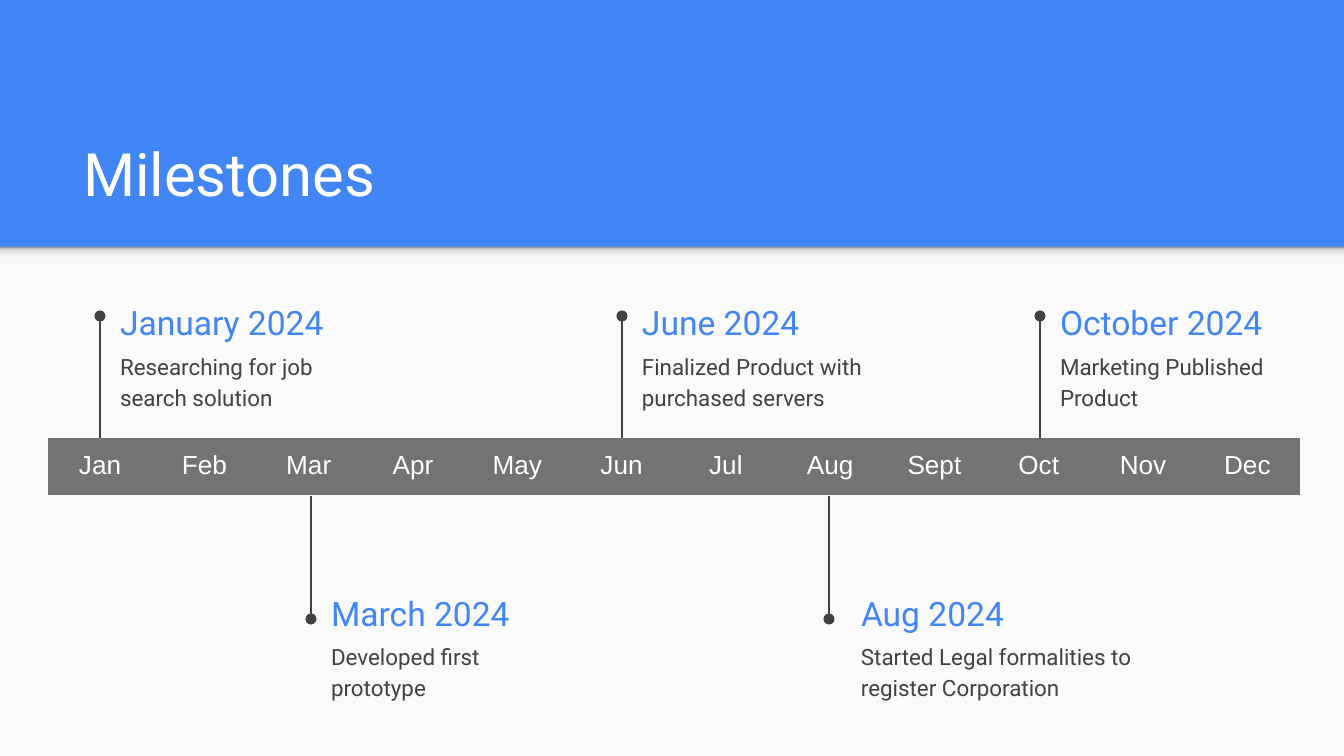
from typing import NamedTuple

from lxml.etree import SubElement
from pptx import Presentation
from pptx.dml.color import RGBColor
from pptx.enum.shapes import MSO_CONNECTOR, MSO_SHAPE
from pptx.enum.text import MSO_ANCHOR, PP_ALIGN
from pptx.oxml.ns import qn
from pptx.util import Emu, Pt

SCALE = 914400 / 134.4
INSET = 13
COLORS = {
    "blue": "4285F4",
    "paper": "FAFAFA",
    "ink": "424242",
    "bar": "737373",
    "white": "FFFFFF",
}
SHADE = [(0, "F9F9F9"), (36, "F9F9F9"), (80, "DEDEDE"), (100, "999999")]
MONTHS = "Jan Feb Mar Apr May Jun Jul Aug Sept Oct Nov Dec".split()
NO_STYLE = "{2D5ABB26-0587-4C30-8999-92F81FD0307C}"


class Box(NamedTuple):
    x: int
    y: int
    w: int
    h: int


class Event(NamedTuple):
    x: int
    above: bool
    head: str
    note: str
    width: int = 266
    gap: int = 7


BAR = Box(48, 438, 1252, 57)
EVENTS = [
    Event(100, True, "January 2024", "Researching for job search solution"),
    Event(311, False, "March 2024", "Developed first prototype"),
    Event(622, True, "June 2024", "Finalized Product with purchased servers", 300),
    Event(829, False, "Aug 2024",
          "Started Legal formalities to register Corporation", 312, 19),
    Event(1040, True, "October 2024", "Marketing Published Product"),
]


def px(size: int) -> Emu:
    return Emu(round(size * SCALE))


def emus(box: Box) -> list[Emu]:
    return [px(size) for size in box]


def rgb(name: str) -> RGBColor:
    return RGBColor.from_string(COLORS[name])


def add_run(para, text: str, size: int, color: str, face: str = "Roboto") -> None:
    run = para.add_run()
    run.text = text
    run.font.size = Pt(size)
    run.font.name = face
    run.font.color.rgb = rgb(color)


def set_frame(frame, anchor: MSO_ANCHOR) -> None:
    frame.word_wrap = True
    frame.vertical_anchor = anchor
    frame.margin_left = frame.margin_right = px(INSET)
    frame.margin_top = frame.margin_bottom = px(INSET)


def add_rect(slide, box: Box):
    rect = slide.shapes.add_shape(MSO_SHAPE.RECTANGLE, *emus(box))
    rect.shadow.inherit = False
    rect.line.fill.background()
    return rect


def add_panel(slide) -> None:
    """Draw the pale lower area and the soft shade along its top edge."""
    panel = add_rect(slide, Box(0, 247, 1344, 509))
    panel.fill.solid()
    panel.fill.fore_color.rgb = rgb("paper")

    edge = add_rect(slide, Box(0, 247, 1344, 16))
    edge.fill.gradient()
    edge.fill.gradient_angle = 90
    stops = next(edge.element.iter(qn("a:gsLst")))
    for stop in list(stops):
        stops.remove(stop)
    for pos, shade in SHADE:
        stop = SubElement(stops, qn("a:gs"), pos=str(pos * 1000))
        SubElement(stop, qn("a:srgbClr"), val=shade)


def set_title(slide, text: str) -> None:
    title = slide.shapes.title
    title.left, title.top, title.width, title.height = emus(Box(70, 109, 1208, 113))
    set_frame(title.text_frame, MSO_ANCHOR.BOTTOM)
    para = title.text_frame.paragraphs[0]
    para.alignment = PP_ALIGN.LEFT
    para.space_after = Pt(4)
    add_run(para, text, 32, "white")


def add_text(slide, box: Box, anchor: MSO_ANCHOR, text: str, size: int, color: str):
    frame = slide.shapes.add_textbox(*emus(box)).text_frame
    set_frame(frame, anchor)
    para = frame.paragraphs[0]
    add_run(para, text, size, color)
    return para


def add_pin(slide, x: int, start: int, end: int) -> None:
    """Draw a stem from the bar that ends in a dot."""
    pin = slide.shapes.add_connector(
        MSO_CONNECTOR.STRAIGHT, px(x), px(start), px(x), px(end))
    pin.line.width = Pt(0.75)
    pin.line.color.rgb = rgb("ink")
    SubElement(pin.line._get_or_add_ln(), qn("a:tailEnd"), type="oval")
    SubElement(pin.element.spPr, qn("a:effectLst"))


def add_event(slide, event: Event) -> None:
    if event.above:
        start, end, top, low = BAR.y, 316, 293, 336
    else:
        start, end, top, low = BAR.y + BAR.h + 1, 619, 584, 626
    add_pin(slide, event.x, start, end)
    left = event.x + event.gap
    add_text(slide, Box(left, top, 266, 58), MSO_ANCHOR.MIDDLE,
             event.head, 18, "blue")
    note = add_text(slide, Box(left, low, event.width, 85), MSO_ANCHOR.TOP,
                    event.note, 12, "ink")
    note.line_spacing = 1.15
    note.space_after = Pt(16)


def add_months(slide) -> None:
    frame = slide.shapes.add_table(1, len(MONTHS), *emus(BAR))
    next(frame.element.iter(qn("a:tableStyleId"))).text = NO_STYLE
    table = frame.table
    table.first_row = table.horz_banding = False
    for cell, month in zip(table.iter_cells(), MONTHS):
        cell.fill.solid()
        cell.fill.fore_color.rgb = rgb("bar")
        cell.margin_left = cell.margin_right = px(INSET)
        cell.margin_top = cell.margin_bottom = px(INSET)
        para = cell.text_frame.paragraphs[0]
        para.alignment = PP_ALIGN.CENTER
        add_run(para, month, 14, "white", "Arial")


def main() -> None:
    deck = Presentation()
    deck.slide_width, deck.slide_height = px(1344), px(756)
    slide = deck.slides.add_slide(deck.slide_layouts.get_by_name("Title Only"))
    slide.background.fill.solid()
    slide.background.fill.fore_color.rgb = rgb("blue")
    add_panel(slide)
    set_title(slide, "Milestones")
    for event in EVENTS:
        add_event(slide, event)
    add_months(slide)
    deck.save("out.pptx")


if __name__ == "__main__":
    main()
